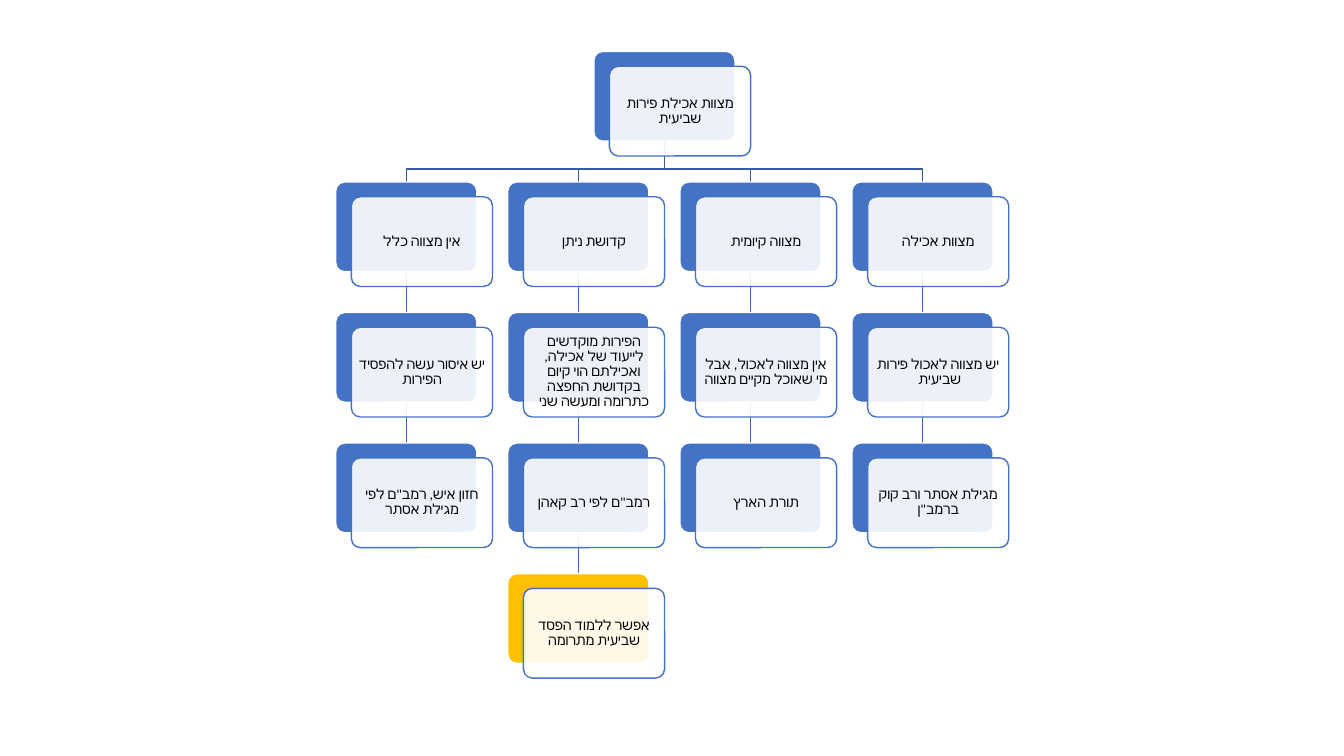
"""Build a right-to-left tree of views on eating seventh-year produce."""
from lxml import etree
from pptx import Presentation
from pptx import util as u
from pptx.dml.color import RGBColor
from pptx.enum import shapes, text
from pptx.oxml.ns import qn

ROOT = "מצוות אכילת פירות שביעית"
COLUMNS = [
    ["אין מצווה כלל", "יש איסור עשה להפסיד הפירות",
     "חזון איש, רמב\"ם לפי מגילת אסתר"],
    ["קדושת ניתן",
     "הפירות מוקדשים לייעוד של אכילה, ואכילתם הוי קיום בקדושת החפצה כתרומה ומעשה שני",
     "רמב\"ם לפי רב קאהן", "אפשר ללמוד הפסד שביעית מתרומה"],
    ["מצווה קיומית", "אין מצווה לאכול, אבל מי שאוכל מקיים מצווה", "תורת הארץ"],
    ["מצוות אכילה", "יש מצווה לאכול פירות שביעית ", "מגילת אסתר ורב קוק ברמב\"ן"],
]
HIGHLIGHT_LEVEL = 4

THEME = {
    "card": "4472C4", "highlight": "FFC000", "paper": "FFFFFF", "ink": "000000",
    "branch": "365B9D", "link": "3E67B2",
    "font": "Calibri", "size": 10, "line": 1, "opacity": 90,
}

CARD_W, CARD_H, RADIUS = 1.4, 0.89, 0.1
SHIFT_X, SHIFT_Y = 0.155, 0.147
LEFT, TOP = 3.33, 0.51
COL_STEP = (8.45 - LEFT) / 3
ROW_STEP = (5.69 - TOP) / 4
ROOT_X = LEFT + 1.5 * COL_STEP
BEND = 0.13


def rgb(name):
    return RGBColor.from_string(THEME[name])


def set_line(line, color):
    line.color.rgb = rgb(color)
    line.width = u.Pt(THEME["line"])


def add_box(s, x, y, fill, line):
    sp = s.shapes.add_shape(shapes.MSO_SHAPE.ROUNDED_RECTANGLE, u.Inches(x),
                            u.Inches(y), u.Inches(CARD_W), u.Inches(CARD_H))
    sp.adjustments[0] = RADIUS
    sp.shadow.inherit = False
    sp.fill.solid()
    sp.fill.fore_color.rgb = rgb(fill)
    set_line(sp.line, line)
    return sp


def add_card(s, x, y, words, fill="card"):
    add_box(s, x, y, fill, "paper")
    sp = add_box(s, x + SHIFT_X, y + SHIFT_Y, "paper", "card")
    color = sp.fill._xPr.find(qn("a:solidFill"))[0]
    etree.SubElement(color, qn("a:alpha")).set("val", str(THEME["opacity"] * 1000))
    tf = sp.text_frame
    tf.word_wrap = True
    tf.vertical_anchor = text.MSO_ANCHOR.MIDDLE
    tf.margin_left = tf.margin_right = u.Inches(0.04)
    tf.margin_top = tf.margin_bottom = u.Inches(0.04)
    p = tf.paragraphs[0]
    p.alignment = text.PP_ALIGN.CENTER
    p.line_spacing = 0.9
    p._p.get_or_add_pPr().set("rtl", "1")
    r = p.add_run()
    r.text = words
    r.font.size = u.Pt(THEME["size"])
    r.font.color.rgb = rgb("ink")
    r.font.name = THEME["font"]
    etree.SubElement(r._r.get_or_add_rPr(), qn("a:cs")).set("typeface", THEME["font"])


def add_branch(s, x0, y0, x1, y1):
    points = [(u.Inches(x), u.Inches(y)) for x, y in
              [(x0, y0), (x0, y1 - BEND), (x1, y1 - BEND), (x1, y1)]]
    builder = s.shapes.build_freeform(*points[0])
    builder.add_line_segments(points[1:], close=False)
    sp = builder.convert_to_shape()
    sp.shadow.inherit = False
    sp.fill.background()
    set_line(sp.line, "branch")


def add_link(s, x, y0, y1):
    c = s.shapes.add_connector(shapes.MSO_CONNECTOR.STRAIGHT, u.Inches(x),
                               u.Inches(y0), u.Inches(x), u.Inches(y1))
    set_line(c.line, "link")
    etree.SubElement(c._element.spPr, qn("a:effectLst"))


def main():
    prs = Presentation()
    prs.slide_width, prs.slide_height = u.Inches(13.33), u.Inches(7.5)
    s = prs.slides.add_slide(prs.slide_layouts[6])
    cards = [(LEFT + col * COL_STEP, level, words)
             for col, column in enumerate(COLUMNS)
             for level, words in enumerate(column, 1)]
    for x, level, _ in cards:
        middle = x + CARD_W / 2
        top = TOP + level * ROW_STEP
        bottom_above = top - ROW_STEP + CARD_H
        if level == 1:
            add_branch(s, ROOT_X + CARD_W / 2, bottom_above, middle, top)
        else:
            add_link(s, middle, bottom_above, top)
    add_card(s, ROOT_X, TOP, ROOT)
    for x, level, words in cards:
        fill = "highlight" if level == HIGHLIGHT_LEVEL else "card"
        add_card(s, x, TOP + level * ROW_STEP, words, fill)
    prs.save("out.pptx")


if __name__ == "__main__":
    main()
